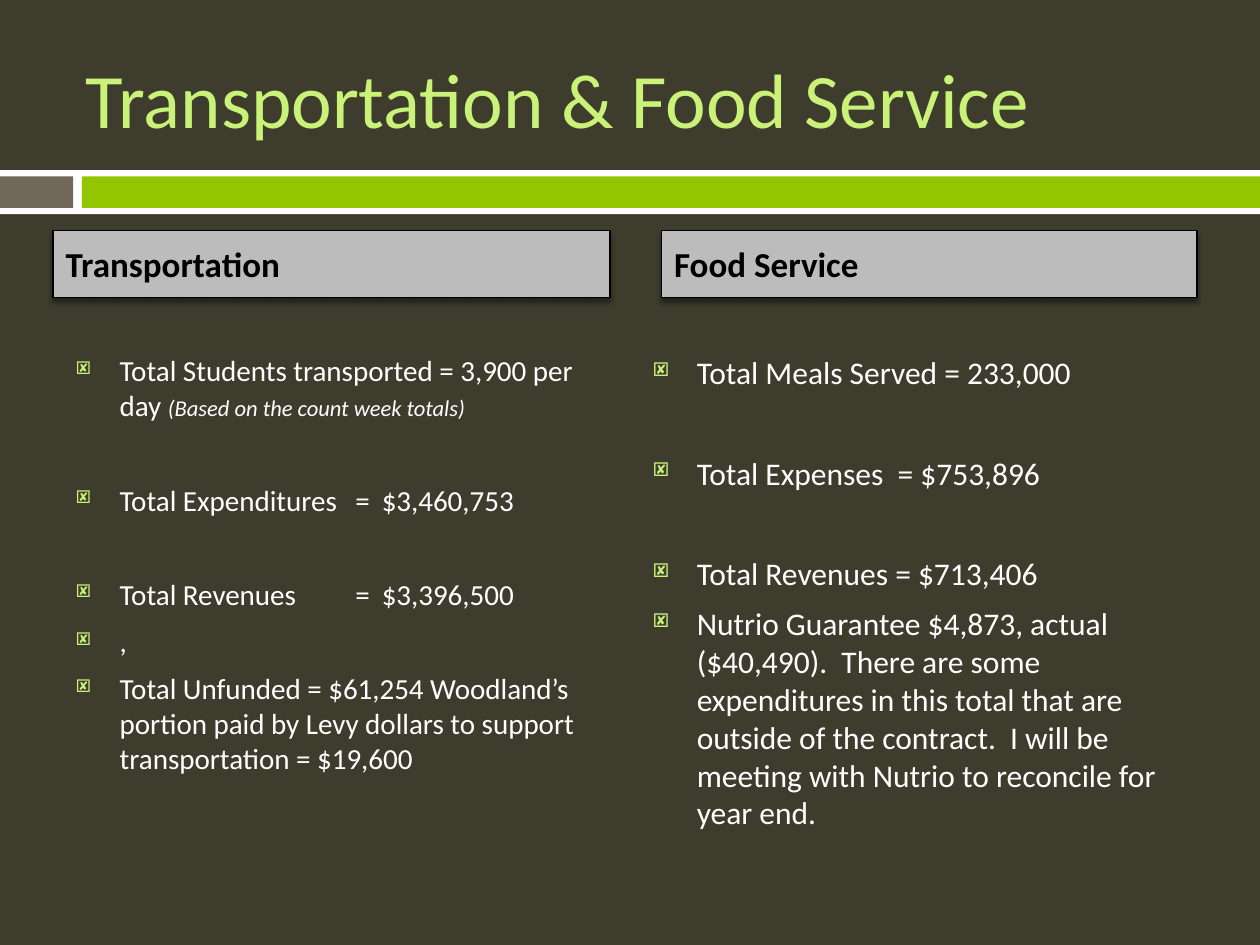
from lxml import etree
from pptx import Presentation
from pptx.dml.color import RGBColor
from pptx.enum.shapes import MSO_SHAPE as Shape
from pptx.enum.text import MSO_ANCHOR as Anchor, MSO_AUTO_SIZE as AutoSize, PP_ALIGN as Align
from pptx.oxml import parse_xml
from pptx.oxml.ns import nsdecls, qn
from pptx.util import Inches, Pt

BACKGROUND, WHITE, BLACK = "3E3D2D", "FFFFFF", "000000"
LIME, GREEN, TAUPE, GRAY = "CAF278", "94C600", "71685A", "BCBCBC"
COMPARISON_LAYOUT = 4
INDENT = 0.35
TAB_STOPS = (2.22, 2.43)  # equals sign and amount

# Each item: space before in points, then runs of (text, font changes)
TRANSPORTATION = [
    (7, [("Total Students transported = 3,900 per day ", {}),
         ("(Based on the count week totals)", {"size": Pt(12.9), "italic": True})]),
    (34, [("Total Expenditures\t=\t$3,460,753", {})]),
    (34, [("Total Revenues\t=\t$3,396,500", {})]),
    (7, [(",", {})]),
    (7, [("Total Unfunded = $61,254 Woodland’s portion paid by Levy dollars "
          "to support transportation = $19,600", {})]),
]
FOOD_SERVICE = [
    (7, [("Total Meals Served = 233,000", {})]),
    (36, [("Total Expenses  = $753,896", {})]),
    (36, [("Total Revenues = $713,406", {})]),
    (7, [("Nutrio Guarantee $4,873, actual ($40,490).  There are some "
          "expenditures in this total that are outside of the contract.  "
          "I will be meeting with Nutrio to reconcile for year end.", {})]),
]


def color(hex_string):
    return RGBColor.from_string(hex_string)


def paint(fill, hex_string):
    fill.solid()
    fill.fore_color.rgb = color(hex_string)


def format_font(font, hex_string, **values):
    font.color.rgb = color(hex_string)
    for name, value in {"name": "Calibri", **values}.items():
        setattr(font, name, value)


def place(shape, box):
    for name, value in zip(("left", "top", "width", "height"), box):
        setattr(shape, name, Inches(value))


def prepare_frame(shape, anchor):
    frame = shape.text_frame
    values = {"word_wrap": True, "auto_size": AutoSize.NONE, "vertical_anchor": anchor}
    for name, value in values.items():
        setattr(frame, name, value)
    return frame


def add_shadow(shape):
    shape._element.spPr.append(parse_xml(
        f'<a:effectLst {nsdecls("a")}>'
        '<a:outerShdw blurRad="38100" dist="30480" dir="5400000" rotWithShape="0">'
        f'<a:srgbClr val="{BLACK}"><a:alpha val="45000"/></a:srgbClr>'
        '</a:outerShdw></a:effectLst>'))


def add_bullet(paragraph):
    """Give the paragraph a hanging box bullet and its tab stops."""
    properties = paragraph._p.get_or_add_pPr()
    properties.set("marL", str(Inches(INDENT)))
    properties.set("indent", str(-Inches(INDENT)))
    bullet_color = etree.SubElement(properties, qn("a:buClr"))
    etree.SubElement(bullet_color, qn("a:srgbClr"), val=LIME)
    etree.SubElement(properties, qn("a:buSzPct"), val="60000")
    etree.SubElement(properties, qn("a:buFont"), typeface="Wingdings 2")
    etree.SubElement(properties, qn("a:buChar"), char="❑")
    tabs = etree.SubElement(properties, qn("a:tabLst"))
    for stop in TAB_STOPS:
        etree.SubElement(tabs, qn("a:tab"), pos=str(Inches(stop)), algn="l")


def add_band(slide, box):
    left, top, width, height = box
    inner_top, inner_height = top + 0.05, height - 0.1
    parts = [
        (box, WHITE),
        ((left, inner_top, 0.58, inner_height), TAUPE),
        ((left + 0.65, inner_top, width - 0.65, inner_height), GREEN),
    ]
    for part_box, fill in parts:
        bar = slide.shapes.add_shape(Shape.RECTANGLE, *map(Inches, part_box))
        bar.shadow.inherit = False
        paint(bar.fill, fill)
        bar.line.fill.background()


def fill_title(shape, box, text):
    place(shape, box)
    frame = prepare_frame(shape, Anchor.MIDDLE)
    frame.text = text
    paragraph = frame.paragraphs[0]
    paragraph.alignment = Align.LEFT
    format_font(paragraph.runs[0].font, LIME, size=Pt(44))


def fill_header(shape, box, text):
    place(shape, box)
    paint(shape.fill, GRAY)
    paint(shape.line.fill, BLACK)
    shape.line.width = Pt(0.79)
    add_shadow(shape)
    frame = prepare_frame(shape, Anchor.MIDDLE)
    frame.text = text
    format_font(frame.paragraphs[0].runs[0].font, BLACK, size=Pt(20), bold=True)


def fill_list(shape, box, items, size):
    place(shape, box)
    frame = prepare_frame(shape, Anchor.TOP)
    for index, (space_before, runs) in enumerate(items):
        paragraph = frame.add_paragraph() if index else frame.paragraphs[0]
        paragraph.space_before = Pt(space_before)
        add_bullet(paragraph)
        for text, changes in runs:
            run = paragraph.add_run()
            run.text = text
            format_font(run.font, WHITE, **{"size": Pt(size), **changes})


def build_slide(presentation):
    slide = presentation.slides.add_slide(presentation.slide_layouts[COMPARISON_LAYOUT])
    paint(slide.background.fill, BACKGROUND)
    add_band(slide, (0, 1.35, 10, 0.35))
    title, left_header, left_list, right_header, right_list = slide.placeholders
    fill_title(title, (0.58, 0.3, 8.92, 0.95), "Transportation & Food Service")
    fill_header(left_header, (0.42, 1.83, 4.42, 0.53), "Transportation")
    fill_list(left_list, (0.5, 2.75, 4.42, 3.2), TRANSPORTATION, 16.6)
    fill_header(right_header, (5.25, 1.83, 4.25, 0.53), "Food Service")
    fill_list(right_list, (5.08, 2.75, 4.42, 3.67), FOOD_SERVICE, 18)


def main():
    presentation = Presentation()
    presentation.slide_width, presentation.slide_height = Inches(10), Inches(7.5)
    build_slide(presentation)
    presentation.save("out.pptx")


if __name__ == "__main__":
    main()
